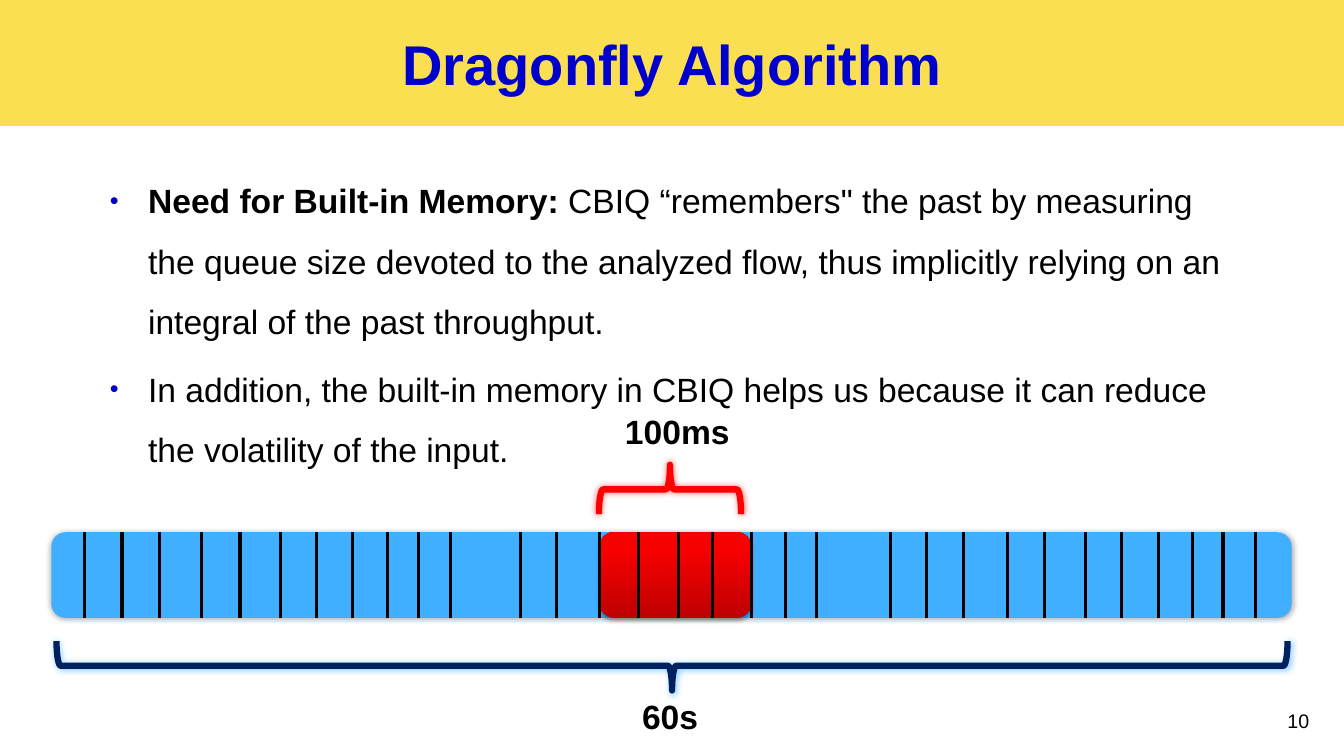
from lxml import etree
from pptx import Presentation
from pptx.dml.color import RGBColor
from pptx.enum.shapes import MSO_CONNECTOR, MSO_SHAPE
from pptx.enum.text import MSO_ANCHOR, PP_ALIGN
from pptx.oxml.ns import qn
from pptx.util import Inches, Pt

RECTANGLE = MSO_SHAPE.RECTANGLE
ROUNDED = MSO_SHAPE.ROUNDED_RECTANGLE
BRACE = MSO_SHAPE.RIGHT_BRACE
STRAIGHT = MSO_CONNECTOR.STRAIGHT
CENTER = PP_ALIGN.CENTER
MIDDLE = MSO_ANCHOR.MIDDLE

YELLOW = RGBColor(0xFB, 0xDF, 0x53)
BLUE = RGBColor(0x00, 0x00, 0xCC)
SKY = RGBColor(0x40, 0xAF, 0xFF)
NAVY = RGBColor(0x00, 0x20, 0x60)
RED = RGBColor(0xFF, 0x00, 0x00)
BRIGHT_RED = RGBColor(0xF7, 0x00, 0x00)
DARK_RED = RGBColor(0xBE, 0x00, 0x00)
BLACK = RGBColor(0x00, 0x00, 0x00)
GLOW_BLUE = RGBColor(0x40, 0xAF, 0xFF)

BAR_TOP, BAR_HEIGHT = 5.28, 0.85


def style_run(run, size, color=BLACK, bold=False):
    run.font.name = "Arial"
    run.font.size = Pt(size)
    run.font.bold = bold
    run.font.color.rgb = color


def add_shadow(shape, color, opacity, blur, distance=0, angle=0):
    shape.shadow.inherit = False
    effects = shape._element.spPr.find(qn("a:effectLst"))
    shadow = etree.SubElement(
        effects, qn("a:outerShdw"), blurRad=str(Pt(blur)), dist=str(Pt(distance)),
        dir=str(angle * 60000), algn="ctr", rotWithShape="0")
    tint = etree.SubElement(shadow, qn("a:srgbClr"), val=str(color))
    etree.SubElement(tint, qn("a:alpha"), val=str(opacity * 1000))


presentation = Presentation()
presentation.slide_width = Inches(13.33)
presentation.slide_height = Inches(7.5)
slide = presentation.slides.add_slide(presentation.slide_layouts[6])
shapes = slide.shapes

title = shapes.add_shape(RECTANGLE, 0, 0, Inches(13.33), Inches(1.25))
title.shadow.inherit = False
title.fill.solid()
title.fill.fore_color.rgb = YELLOW
title.line.fill.background()
title.text_frame.text = "Dragonfly Algorithm"
title.text_frame.vertical_anchor = MIDDLE
title.text_frame.paragraphs[0].alignment = CENTER
style_run(title.text_frame.paragraphs[0].runs[0], 40, BLUE, True)

body = shapes.add_textbox(Inches(0.99), Inches(1.54), Inches(11.32), Inches(3.31))
body.text_frame.word_wrap = True
bullets = [
    [("Need for Built-in Memory: ", True),
     ("CBIQ “remembers\" the past by measuring the queue size devoted to the "
      "analyzed flow, thus implicitly relying on an integral of the past throughput.", False)],
    [("In addition, the built-in memory in CBIQ helps us because it can reduce "
      "the volatility of the input.", False)],
]
for index, parts in enumerate(bullets):
    paragraph = body.text_frame.add_paragraph() if index else body.text_frame.paragraphs[0]
    paragraph.line_spacing = 1.5
    paragraph.space_before = Pt(4.8)
    for text, bold in parts:
        run = paragraph.add_run()
        run.text = text
        style_run(run, 24, BLACK, bold)
    properties = paragraph._p.get_or_add_pPr()
    properties.set("marL", str(Inches(0.38)))
    properties.set("indent", str(Inches(-0.38)))
    bullet_color = etree.SubElement(properties, qn("a:buClr"))
    etree.SubElement(bullet_color, qn("a:srgbClr"), val=str(BLUE))
    etree.SubElement(properties, qn("a:buSzPct"), val="75000")
    etree.SubElement(properties, qn("a:buFont"), typeface="Arial")
    etree.SubElement(properties, qn("a:buChar"), char="•")

timeline = shapes.add_shape(
    ROUNDED, Inches(0.51), Inches(BAR_TOP), Inches(12.3), Inches(BAR_HEIGHT))
timeline.fill.solid()
timeline.fill.fore_color.rgb = SKY
timeline.line.fill.background()
add_shadow(timeline, BLACK, 40, 5)

window = shapes.add_shape(
    ROUNDED, Inches(5.95), Inches(BAR_TOP), Inches(1.5), Inches(BAR_HEIGHT))
window.fill.gradient()
window.fill.gradient_angle = 90
bottom_stop, top_stop = window.fill.gradient_stops
bottom_stop.color.rgb = DARK_RED
bottom_stop.position = 0
top_stop.color.rgb = BRIGHT_RED
top_stop.position = 0.8
window.line.fill.background()
add_shadow(window, BLACK, 35, 3.1, 1.8, 90)

braces = [
    (6.42, 0.5, 12.21, 90, NAVY, GLOW_BLUE),
    (6.4, 4.15, 1.41, 270, RED, RED),
]
for left, top, length, rotation, color, glow in braces:
    brace = shapes.add_shape(BRACE, Inches(left), Inches(top), Inches(0.49), Inches(length))
    brace.rotation = rotation
    brace.fill.background()
    brace.line.color.rgb = color
    brace.line.width = Pt(4.5)
    add_shadow(brace, glow, 60, 5)

tick_positions = [
    0.84, 1.21, 1.58, 2, 2.38, 2.78, 3.14, 3.5, 3.84, 4.15, 4.47,
    5.16, 5.52, 5.95, 6.33, 6.73, 7.07, 7.45, 7.79, 8.1,
    8.83, 9.19, 9.56, 9.99, 10.36, 10.77, 11.12, 11.49, 11.83, 12.13, 12.45,
]
for x in tick_positions:
    tick = shapes.add_connector(
        STRAIGHT, Inches(x), Inches(BAR_TOP), Inches(x), Inches(BAR_TOP + BAR_HEIGHT))
    tick.line.color.rgb = BLACK
    tick.line.width = Pt(2.25)
    etree.SubElement(tick._element.spPr, qn("a:effectLst"))

labels = [
    ("100ms", 6.1, 4.03, 1.25, 0.5, 24, True),
    ("60s", 6.27, 6.85, 0.76, 0.5, 24, True),
    ("10", 12.67, 6.98, 0.66, 0.52, 14, False),
]
for text, left, top, width, height, size, bold in labels:
    label = shapes.add_textbox(Inches(left), Inches(top), Inches(width), Inches(height))
    label.text_frame.text = text
    label.text_frame.word_wrap = False
    style_run(label.text_frame.paragraphs[0].runs[0], size, BLACK, bold)

presentation.save("out.pptx")
